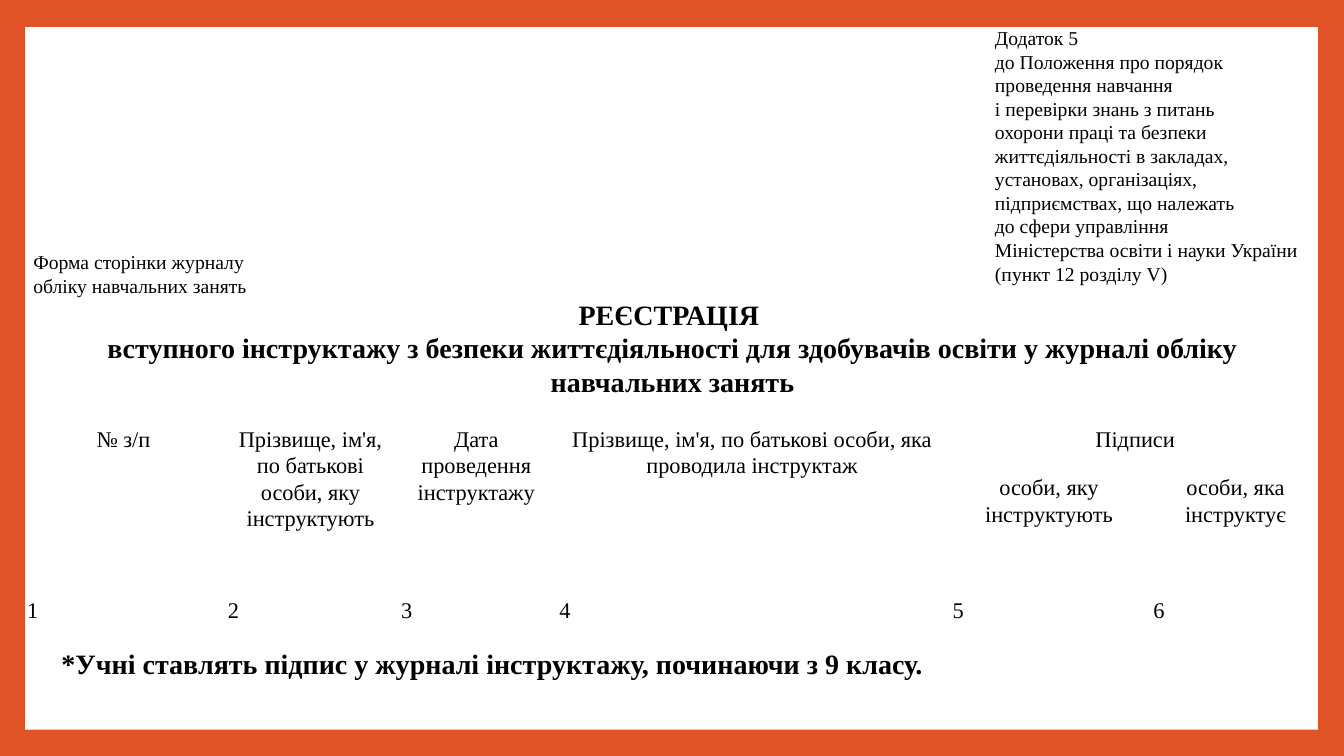
from dataclasses import dataclass
from pptx import Presentation
from pptx.dml.color import RGBColor
from pptx.enum.shapes import MSO_SHAPE
from pptx.enum.text import MSO_ANCHOR, MSO_AUTO_SIZE, PP_ALIGN
from pptx.oxml.ns import qn
from pptx.util import Inches, Pt

RECT = MSO_SHAPE.RECTANGLE
TOP = MSO_ANCHOR.TOP
GROW = MSO_AUTO_SIZE.SHAPE_TO_FIT_TEXT
LEFT, MID = PP_ALIGN.LEFT, PP_ALIGN.CENTER
TITLE_ONLY = 5
NO_GRID = "{2D5ABB26-0587-4C30-8999-92F81FD0307C}"


@dataclass(frozen=True)
class Theme:
    face: str = "Times New Roman"
    ink: RGBColor = RGBColor(0x00, 0x00, 0x00)
    page: RGBColor = RGBColor(0xFF, 0xFF, 0xFF)
    edge: RGBColor = RGBColor(0xDF, 0x53, 0x27)
    small: int = 14
    mid: int = 16
    large: int = 20


def write(para, text, theme, size, bold=False, align=LEFT, line=1.0, after=0):
    para.text = text
    para.alignment = align
    para.line_spacing = line
    para.space_after = Pt(after)
    for run in para.runs:
        font = run.font
        font.name = theme.face
        font.size = Pt(size)
        font.bold = bold
        font.color.rgb = theme.ink


class Deck:
    def __init__(self, theme):
        self.theme = theme
        self.file = Presentation()
        self.file.slide_width = Inches(13.33)
        self.file.slide_height = Inches(7.5)
        self.slide = self.file.slides.add_slide(self.file.slide_layouts[TITLE_ONLY])
        self.shapes = self.slide.shapes
        back = self.slide.background.fill
        back.solid()
        back.fore_color.rgb = theme.edge

    def panel(self, box):
        shape = self.shapes.add_shape(RECT, *map(Inches, box))
        shape.shadow.inherit = False
        shape.fill.solid()
        shape.fill.fore_color.rgb = self.theme.page
        shape.line.fill.background()

    def fill(self, shape, paras):
        frame = shape.text_frame
        frame.word_wrap = True
        frame.auto_size = GROW
        frame.vertical_anchor = TOP
        for i, (text, style) in enumerate(paras):
            para = frame.add_paragraph() if i else frame.paragraphs[0]
            write(para, text, self.theme, **style)

    def title(self, box, paras):
        shape = self.shapes.title
        shape.left, shape.top, shape.width, shape.height = map(Inches, box)
        self.shapes.element.append(shape.element)
        self.fill(shape, paras)

    def text(self, box, paras):
        self.fill(self.shapes.add_textbox(*map(Inches, box)), paras)

    def table(self, box, cols, rows, spans, cells):
        frame = self.shapes.add_table(len(rows), len(cols), *map(Inches, box))
        grid = frame.table
        grid.first_row = grid.horz_banding = False
        grid._tbl.tblPr.find(qn("a:tableStyleId")).text = NO_GRID
        for col, width in zip(grid.columns, cols):
            col.width = Inches(width)
        for row, height in zip(grid.rows, rows):
            row.height = Inches(height)
        for first, last in spans:
            grid.cell(*first).merge(grid.cell(*last))
        for r, row in enumerate(cells):
            for c, text in enumerate(row):
                cell = grid.cell(r, c)
                cell.fill.background()
                cell.margin_left = cell.margin_right = Inches(0.04)
                cell.margin_top = cell.margin_bottom = Inches(0.04)
                if text:
                    align = LEFT if text.isdigit() else MID
                    write(cell.text_frame.paragraphs[0], text, self.theme,
                          self.theme.mid, align=align, line=1.07, after=5)


def main():
    theme = Theme()
    deck = Deck(theme)
    small = dict(size=theme.small)
    strong = dict(size=theme.large, bold=True)

    deck.panel((0.25, 0.27, 12.82, 6.97))
    annex = (
        "Додаток 5",
        "до Положення про порядок",
        "проведення навчання",
        "і перевірки знань з питань",
        "охорони праці та безпеки",
        "життєдіяльності в закладах,",
        "установах, організаціях,",
        "підприємствах, що належать",
        "до сфери управління",
        "Міністерства освіти і науки України",
        "(пункт 12 розділу V)",
    )
    deck.text((9.77, 0.21, 3.33, 2.69), [(line, small) for line in annex])
    deck.title((0.23, 2.43, 12.88, 1.58), [
        ("Форма сторінки журналу \vобліку навчальних занять", small),
        ("РЕЄСТРАЦІЯ \vвступного інструктажу з безпеки життєдіяльності "
         "для здобувачів освіти у журналі обліку навчальних занять",
         dict(strong, align=MID)),
    ])

    cols = (1.99, 1.72, 1.57, 3.9, 1.99, 1.71)
    spans = [((0, c), (1, c)) for c in range(4)] + [((0, 4), (0, 5))]
    cells = (
        ("№ з/п",
         "Прізвище, ім'я, по батькові особи, яку інструктують",
         "Дата проведення інструктажу",
         "Прізвище, ім'я, по батькові особи, яка проводила інструктаж",
         "Підписи", ""),
        ("", "", "", "", "особи, яку інструктують", "особи, яка інструктує"),
        [str(n + 1) for n in range(len(cols))],
    )
    deck.table((0.23, 4.18, 12.88, 1.55), cols, (0.48, 0.6, 0.33), spans, cells)
    deck.text((0.51, 6.36, 11.14, 0.44), [
        ("*Учні ставлять підпис у журналі інструктажу, починаючи з 9 класу.",
         strong),
    ])
    deck.file.save("out.pptx")


if __name__ == "__main__":
    main()
